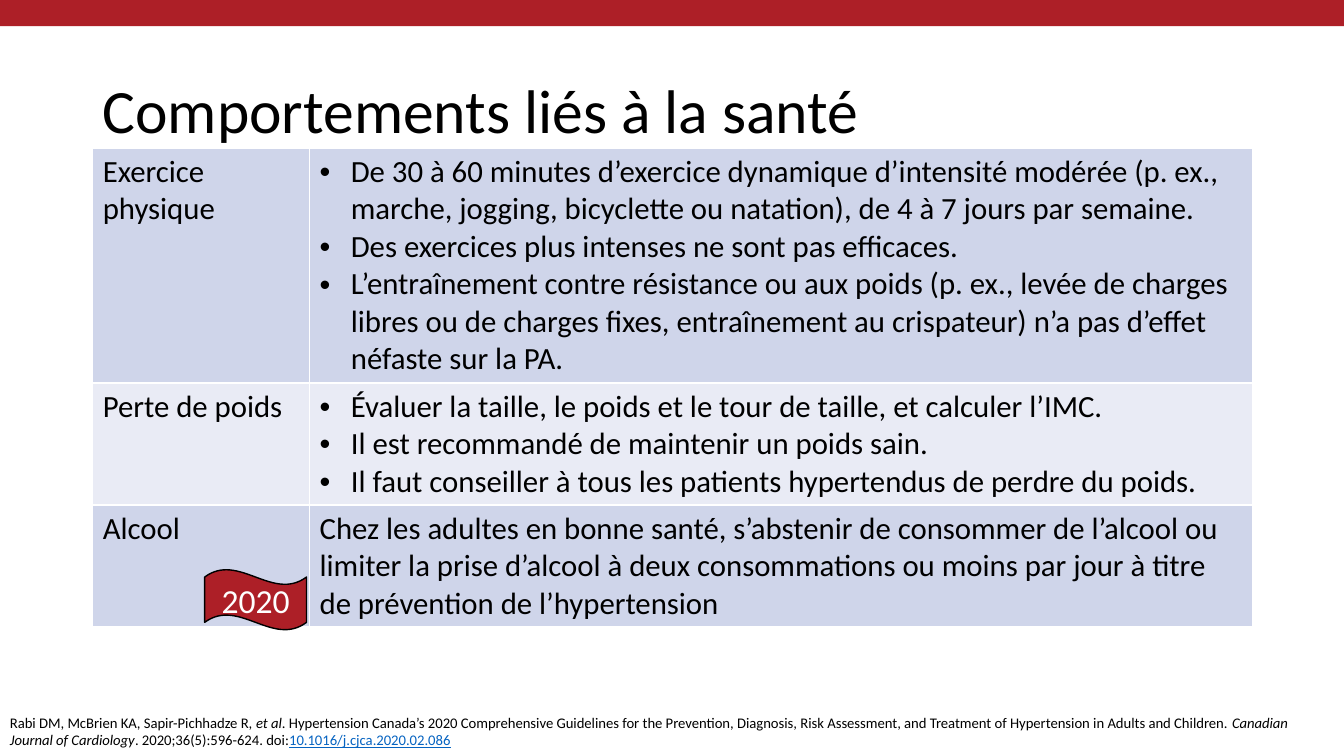
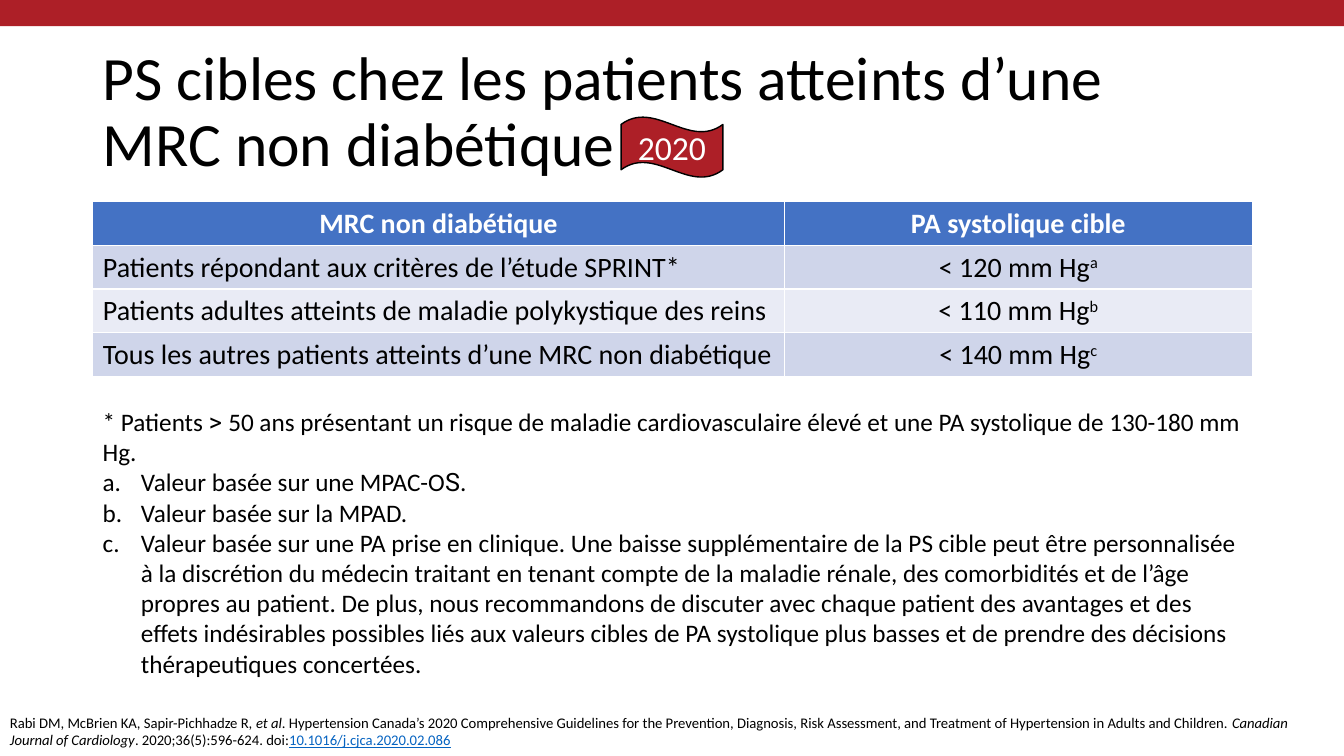
from lxml import etree
from pptx import Presentation
from pptx.dml.color import RGBColor
from pptx.enum.shapes import MSO_SHAPE
from pptx.enum.text import MSO_ANCHOR, PP_ALIGN
from pptx.oxml.ns import qn
from pptx.util import Inches, Pt

RECTANGLE, WAVE = MSO_SHAPE.RECTANGLE, MSO_SHAPE.WAVE
CENTER, LEFT = PP_ALIGN.CENTER, PP_ALIGN.LEFT
MIDDLE = MSO_ANCHOR.MIDDLE

FONT = "Calibri"
RED, BLACK, WHITE, LINK = "AD1F27", "000000", "FFFFFF", "0563C1"
HEADER_FILL, ROW_FILLS = "4472C4", ["CFD5EA", "E9EBF5"]
MARGIN, CONTENT_WIDTH, SLIDE_WIDTH = 0.92, 11.5, 13.33

ITALIC = {"italic": True}
ROBOTO = {"name": "Roboto"}
BULLET = {"indent": 0.31, "tag": "a:buChar", "attributes": {"char": "•"}}
LETTER = {"indent": 0.38, "tag": "a:buAutoNum", "attributes": {"type": "alphaLcPeriod"}}

CITATION = [
    "Rabi DM, McBrien KA, Sapir-Pichhadze R, ",
    ("et al", ITALIC),
    ". Hypertension Canada’s 2020 Comprehensive Guidelines for the Prevention, Diagnosis, "
    "Risk Assessment, and Treatment of Hypertension in Adults and Children. ",
    ("Canadian Journal of Cardiology", ITALIC),
    ". 2020;36(5):596-624. doi:",
    ("10.1016/j.cjca.2020.02.086", {"color": LINK, "underline": True}),
]

# A paragraph is (marker, runs); a run is a string or (string, format).
SLIDES = [
    {
        "title": "Comportements liés à la santé",
        "table_top": 1.47,
        "columns": [2.15, 9.35],
        "row_heights": [2.33, 1.21, 1.21],
        "size": 22,
        "has_header": False,
        "alignments": [LEFT, LEFT],
        "rows": [
            [
                [(None, ["Exercice physique"])],
                [
                    (BULLET, ["De 30 à 60 minutes d’exercice dynamique d’intensité modérée "
                              "(p. ex., marche, jogging, bicyclette ou natation), "
                              "de 4 à 7 jours par semaine."]),
                    (BULLET, ["Des exercices plus intenses ne sont pas efficaces."]),
                    (BULLET, ["L’entraînement contre résistance ou aux poids (p. ex., levée de "
                              "charges libres ou de charges fixes, entraînement au crispateur) "
                              "n’a pas d’effet néfaste sur la PA."]),
                ],
            ],
            [
                [(None, ["Perte de poids"])],
                [
                    (BULLET, ["Évaluer la taille, le poids et le tour de taille, "
                              "et calculer l’IMC."]),
                    (BULLET, ["Il est recommandé de maintenir un poids sain."]),
                    (BULLET, ["Il faut conseiller à tous les patients hypertendus "
                              "de perdre du poids."]),
                ],
            ],
            [
                [(None, ["Alcool"])],
                [(None, ["Chez les adultes en bonne santé, s’abstenir de consommer de l’alcool ou "
                         "limiter la prise d’alcool à deux consommations ou moins par jour à titre "
                         "de prévention de l’hypertension"])],
            ],
        ],
        "notes": [],
        "badge": (2.03, 5.65),
    },
    {
        "title": "PS cibles chez les patients atteints d’une MRC non diabétique",
        "table_top": 2,
        "columns": [6.86, 4.64],
        "row_heights": [0.43] * 4,
        "size": 20,
        "has_header": True,
        "alignments": [LEFT, CENTER],
        "rows": [
            [[(None, ["MRC non diabétique"])], [(None, ["PA systolique cible"])]],
        ] + [
            [[(None, [group])], [(None, [f"< {target} mm Hg", (note, {"baseline": 30000})])]]
            for group, target, note in [
                ("Patients répondant aux critères de l’étude SPRINT*", 120, "a"),
                ("Patients adultes atteints de maladie polykystique des reins", 110, "b"),
                ("Tous les autres patients atteints d’une MRC non diabétique", 140, "c"),
            ]
        ],
        "notes": [
            (None, ["* Patients ", ("> ", ROBOTO),
                    "50 ans présentant un risque de maladie cardiovasculaire élevé "
                    "et une PA systolique de 130-180 mm Hg."]),
            (LETTER, ["Valeur basée sur une MPAC-O", ("S", ROBOTO), "."]),
            (LETTER, ["Valeur basée sur la MPAD."]),
            (LETTER, ["Valeur basée sur une PA prise en clinique. Une baisse supplémentaire de la "
                      "PS cible peut être personnalisée à la discrétion du médecin traitant en "
                      "tenant compte de la maladie rénale, des comorbidités et de l’âge propres au "
                      "patient. De plus, nous recommandons de discuter avec chaque patient des "
                      "avantages et des effets indésirables possibles liés aux valeurs cibles de "
                      "PA systolique plus basses et de prendre des décisions thérapeutiques "
                      "concertées."]),
        ],
        "badge": (6.16, 1.16),
    },
]


def write_text(frame, paragraphs, size, alignment=LEFT, **defaults):
    """Fill a text frame; each run's format is laid over the defaults."""
    frame.word_wrap = True
    for index, (marker, runs) in enumerate(paragraphs):
        paragraph = frame.add_paragraph() if index else frame.paragraphs[0]
        paragraph.alignment = alignment
        if marker:
            properties = paragraph._p.get_or_add_pPr()
            indent = Inches(marker["indent"])
            properties.set("marL", str(indent))
            properties.set("indent", str(-indent))
            etree.SubElement(properties, qn("a:buFont"), typeface="Arial" if marker is BULLET else FONT)
            etree.SubElement(properties, qn(marker["tag"]), marker["attributes"])
        for item in runs:
            text, changes = (item, {}) if isinstance(item, str) else item
            run = paragraph.add_run()
            run.text = text
            values = {"name": FONT, "size": Pt(size), "color": BLACK, **defaults, **changes}
            for attribute, value in values.items():
                if attribute == "color":
                    run.font.color.rgb = RGBColor.from_string(value)
                elif attribute == "baseline":
                    run._r.get_or_add_rPr().set("baseline", str(value))
                else:
                    setattr(run.font, attribute, value)


def add_red_shape(slide, kind, left, top, width, height):
    shape = slide.shapes.add_shape(kind, Inches(left), Inches(top), Inches(width), Inches(height))
    shape.shadow.inherit = False
    shape.fill.solid()
    shape.fill.fore_color.rgb = RGBColor.from_string(RED)
    shape.line.fill.background()
    return shape


presentation = Presentation()
presentation.slide_width = Inches(SLIDE_WIDTH)
presentation.slide_height = Inches(7.5)
blank_layout = presentation.slide_layouts[6]

for content in SLIDES:
    slide = presentation.slides.add_slide(blank_layout)
    add_red_shape(slide, RECTANGLE, 0, 0, SLIDE_WIDTH, 0.26)

    title = slide.shapes.add_textbox(Inches(MARGIN), Inches(0.4), Inches(10.3), Inches(1.45)).text_frame
    title.vertical_anchor = MIDDLE
    write_text(title, [(None, [content["title"]])], 44)
    title.paragraphs[0].line_spacing = 0.9

    rows, columns, heights = content["rows"], content["columns"], content["row_heights"]
    table = slide.shapes.add_table(
        len(rows), len(columns), Inches(MARGIN), Inches(content["table_top"]),
        Inches(CONTENT_WIDTH), Inches(sum(heights))).table
    table.first_row = content["has_header"]
    for column, width in zip(table.columns, columns):
        column.width = Inches(width)
    for row_index, (row, height) in enumerate(zip(rows, heights)):
        table.rows[row_index].height = Inches(height)
        is_header = content["has_header"] and row_index == 0
        band = row_index - content["has_header"]
        fill = HEADER_FILL if is_header else ROW_FILLS[band % 2]
        for column_index, paragraphs in enumerate(row):
            cell = table.cell(row_index, column_index)
            cell.fill.solid()
            cell.fill.fore_color.rgb = RGBColor.from_string(fill)
            alignment = CENTER if is_header else content["alignments"][column_index]
            write_text(cell.text_frame, paragraphs, content["size"], alignment,
                       color=WHITE if is_header else BLACK, bold=is_header)

    if content["notes"]:
        notes = slide.shapes.add_textbox(Inches(MARGIN), Inches(3.98), Inches(CONTENT_WIDTH), Inches(2.8))
        write_text(notes.text_frame, content["notes"], 18)

    citation = slide.shapes.add_textbox(0, Inches(7.03), Inches(SLIDE_WIDTH), Inches(0.45))
    write_text(citation.text_frame, [(None, CITATION)], 10.5)

    badge = add_red_shape(slide, WAVE, *content["badge"], 1.01, 0.6)
    badge.line.color.rgb = RGBColor.from_string(BLACK)
    badge.line.width = Pt(1)
    badge.text_frame.vertical_anchor = MIDDLE
    write_text(badge.text_frame, [(None, ["2020"])], 24, CENTER, color=WHITE)

presentation.save("out.pptx")
